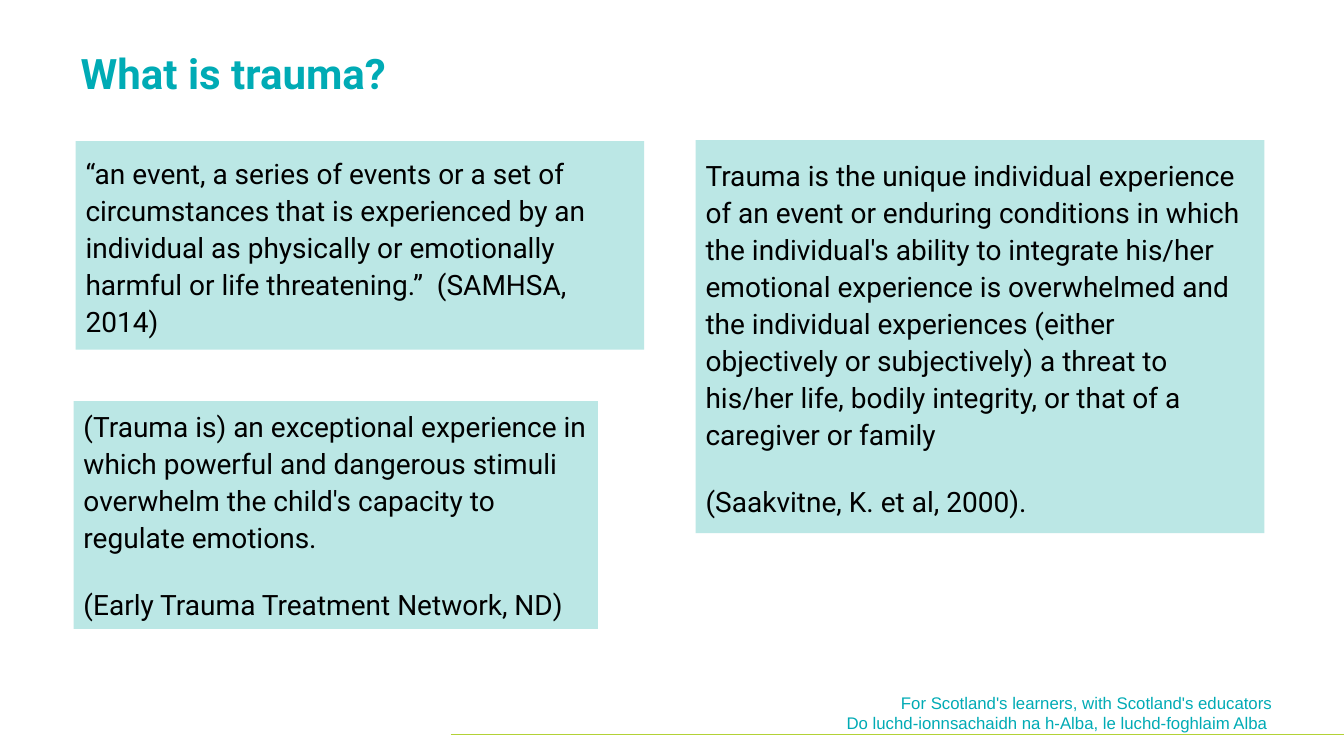
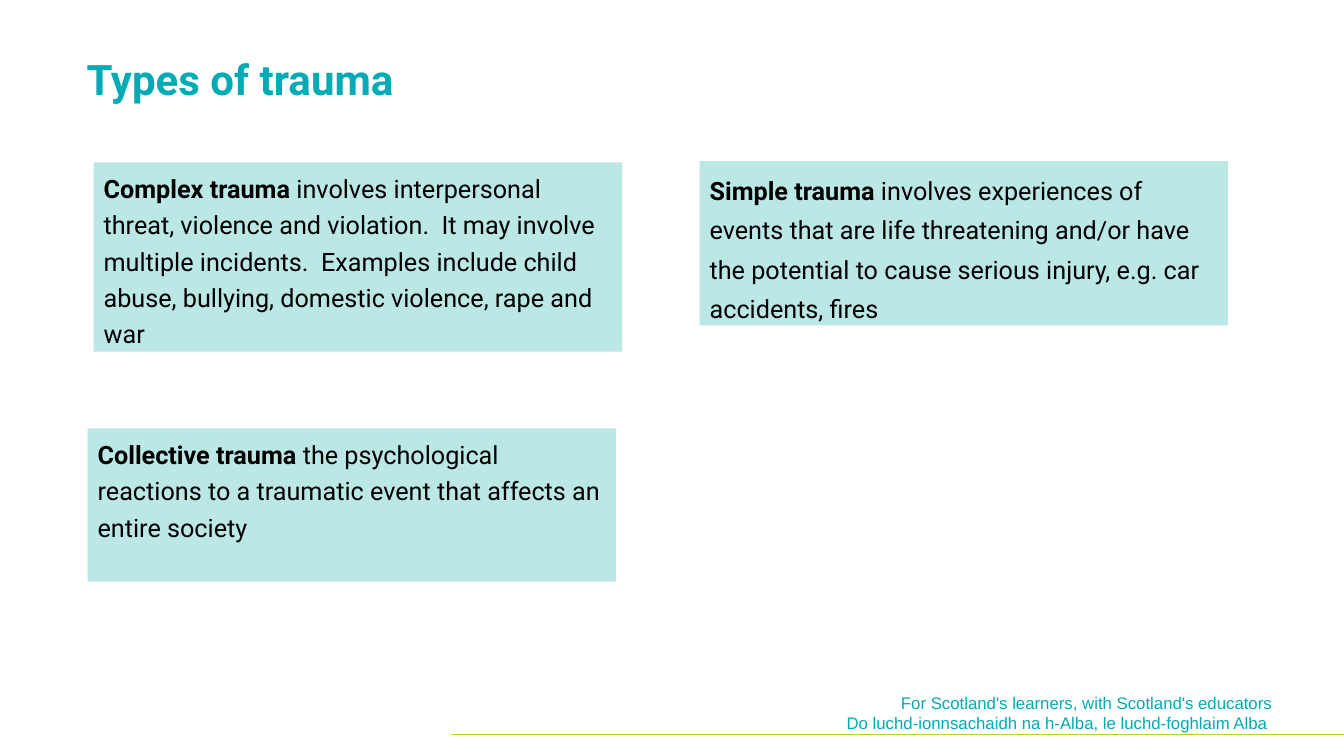
from dataclasses import dataclass

from lxml import etree
from pptx import Presentation
from pptx.dml.color import RGBColor
from pptx.enum.shapes import MSO_CONNECTOR, MSO_SHAPE
from pptx.enum.text import MSO_ANCHOR as Anchor, MSO_AUTO_SIZE as AutoSize, PP_ALIGN as Align
from pptx.oxml.ns import qn
from pptx.util import Inches, Pt


@dataclass(frozen=True)
class Theme:
    teal: RGBColor = RGBColor.from_string("00ABB5")
    pale_teal: RGBColor = RGBColor.from_string("BBE7E5")
    lime: RGBColor = RGBColor.from_string("B3D236")
    black: RGBColor = RGBColor.from_string("000000")
    main_font: str = "Roboto"
    footer_font: str = "Arial"
    title_size: Pt = Pt(30)
    quote_size: Pt = Pt(20)
    type_size: Pt = Pt(18)
    footer_size: Pt = Pt(12)
    citation_gap: Pt = Pt(24)
    rule_width: Pt = Pt(0.75)


THEME = Theme()
SLIDE_WIDTH, SLIDE_HEIGHT = 13.33, 7.5
TITLE_SIZE = (8.89, 0.78)
TYPE_WIDTH = 5.24
FOOTER_BOX = (8.23, 6.82, 4.49, 0.5)
FOOTER_LINES = (
    "For Scotland's learners, with Scotland's educators",
    "Do luchd-ionnsachaidh na h-Alba, le luchd-foghlaim Alba ",
)
RULE_LEFT, RULE_TOP = 4.47, 7.29

# Each quote: box, anchor, text, citation on its own line
QUOTES = (
    ((0.75, 1.4, 5.64, 2.07), Anchor.MIDDLE,
     "“an event, a series of events or a set of circumstances that is experienced by an "
     "individual as physically or emotionally harmful or life threatening.”  (SAMHSA, 2014)",
     None),
    ((0.73, 3.98, 5.2, 2.26), Anchor.TOP,
     "(Trauma is) an exceptional experience in which powerful and dangerous stimuli "
     "overwhelm the child's capacity to regulate emotions.",
     "(Early Trauma Treatment Network, ND)"),
    ((6.9, 1.39, 5.64, 3.9), Anchor.MIDDLE,
     "Trauma is the unique individual experience of an event or enduring conditions in which "
     "the individual's ability to integrate his/her emotional experience is overwhelmed and "
     "the individual experiences (either objectively or subjectively) a threat to his/her "
     "life, bodily integrity, or that of a caregiver or family",
     "(Saakvitne, K. et al, 2000)."),
)

# Each type: left, top, height, line spacing, term, definition
TRAUMA_TYPES = (
    (0.93, 1.61, 1.88, 1.2, "Complex trauma ",
     "involves interpersonal threat, violence and violation.  It may involve multiple "
     "incidents.  Examples include child abuse, bullying, domestic violence, rape and war"),
    (0.87, 4.25, 1.52, 1.2, "Collective trauma ",
     "the psychological reactions to a traumatic event that affects an entire society"),
    (6.94, 1.6, 1.63, 1.3, "Simple trauma ",
     "involves experiences of events that are life threatening and/or have the potential to "
     "cause serious injury, e.g. car accidents, fires"),
)


def to_inches(box):
    return [Inches(length) for length in box]


def prepare_frame(shape, anchor):
    frame = shape.text_frame
    frame.word_wrap = True
    frame.auto_size = AutoSize.NONE
    frame.vertical_anchor = anchor
    return frame


def style_paragraph(paragraph, size, color, font=THEME.main_font, align=Align.LEFT):
    paragraph.alignment = align
    paragraph.font.name = font
    paragraph.font.size = size
    paragraph.font.color.rgb = color


def add_title(slide, text, left, top):
    title = slide.shapes.title
    title.left, title.top, title.width, title.height = to_inches((left, top, *TITLE_SIZE))
    frame = prepare_frame(title, Anchor.MIDDLE)
    frame.text = text
    paragraph = frame.paragraphs[0]
    style_paragraph(paragraph, THEME.title_size, THEME.teal)
    paragraph.font.bold = True


def add_footer(slide, box):
    rule = slide.shapes.add_connector(
        MSO_CONNECTOR.STRAIGHT,
        *to_inches((RULE_LEFT, RULE_TOP, SLIDE_WIDTH, RULE_TOP)))
    rule.line.color.rgb = THEME.lime
    rule.line.width = THEME.rule_width
    etree.SubElement(rule._element.spPr, qn("a:effectLst"))

    frame = prepare_frame(slide.shapes.add_textbox(*to_inches(box)), Anchor.TOP)
    frame.text = "\n".join(FOOTER_LINES)
    for paragraph in frame.paragraphs:
        style_paragraph(paragraph, THEME.footer_size, THEME.teal,
                        THEME.footer_font, Align.RIGHT)


def add_panel(slide, box, anchor=Anchor.TOP):
    """Add a pale rectangle and return its text frame."""
    panel = slide.shapes.add_shape(MSO_SHAPE.RECTANGLE, *to_inches(box))
    panel.shadow.inherit = False
    panel.fill.solid()
    panel.fill.fore_color.rgb = THEME.pale_teal
    panel.line.fill.background()
    return prepare_frame(panel, anchor)


def add_quote(slide, box, anchor, text, citation):
    frame = add_panel(slide, box, anchor)
    quote = frame.paragraphs[0]
    quote.text = text
    quote.line_spacing = 1.1
    style_paragraph(quote, THEME.quote_size, THEME.black)
    if citation:
        source = frame.add_paragraph()
        source.text = citation
        source.space_before = THEME.citation_gap
        style_paragraph(source, THEME.quote_size, THEME.black)


def add_trauma_type(slide, box, line_spacing, term, definition):
    paragraph = add_panel(slide, box).paragraphs[0]
    paragraph.line_spacing = line_spacing
    style_paragraph(paragraph, THEME.type_size, THEME.black)
    for text, bold in ((term, True), (definition, False)):
        run = paragraph.add_run()
        run.text = text
        run.font.bold = bold


def add_base_slide(presentation, title, left, top):
    slide = presentation.slides.add_slide(presentation.slide_layouts[5])
    add_footer(slide, FOOTER_BOX)
    add_title(slide, title, left, top)
    return slide


def build_definition_slide(presentation):
    slide = add_base_slide(presentation, "What is trauma?", 0.7, 0.33)
    for quote in QUOTES:
        add_quote(slide, *quote)


def build_types_slide(presentation):
    slide = add_base_slide(presentation, "Types of trauma", 0.76, 0.39)
    for left, top, height, line_spacing, term, definition in TRAUMA_TYPES:
        box = (left, top, TYPE_WIDTH, height)
        add_trauma_type(slide, box, line_spacing, term, definition)


def main():
    presentation = Presentation()
    presentation.slide_width = Inches(SLIDE_WIDTH)
    presentation.slide_height = Inches(SLIDE_HEIGHT)
    build_definition_slide(presentation)
    build_types_slide(presentation)
    presentation.save("out.pptx")


if __name__ == "__main__":
    main()
